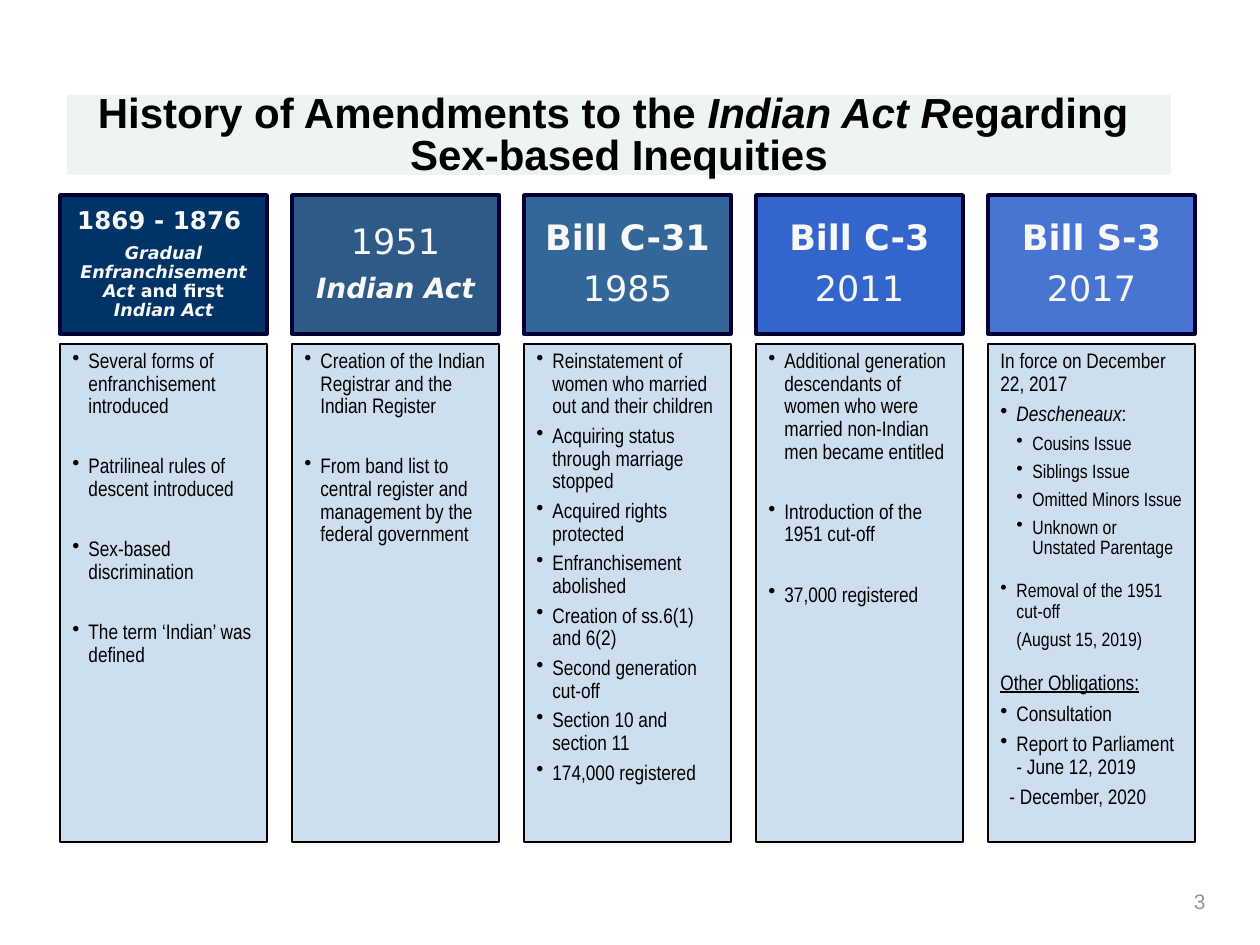
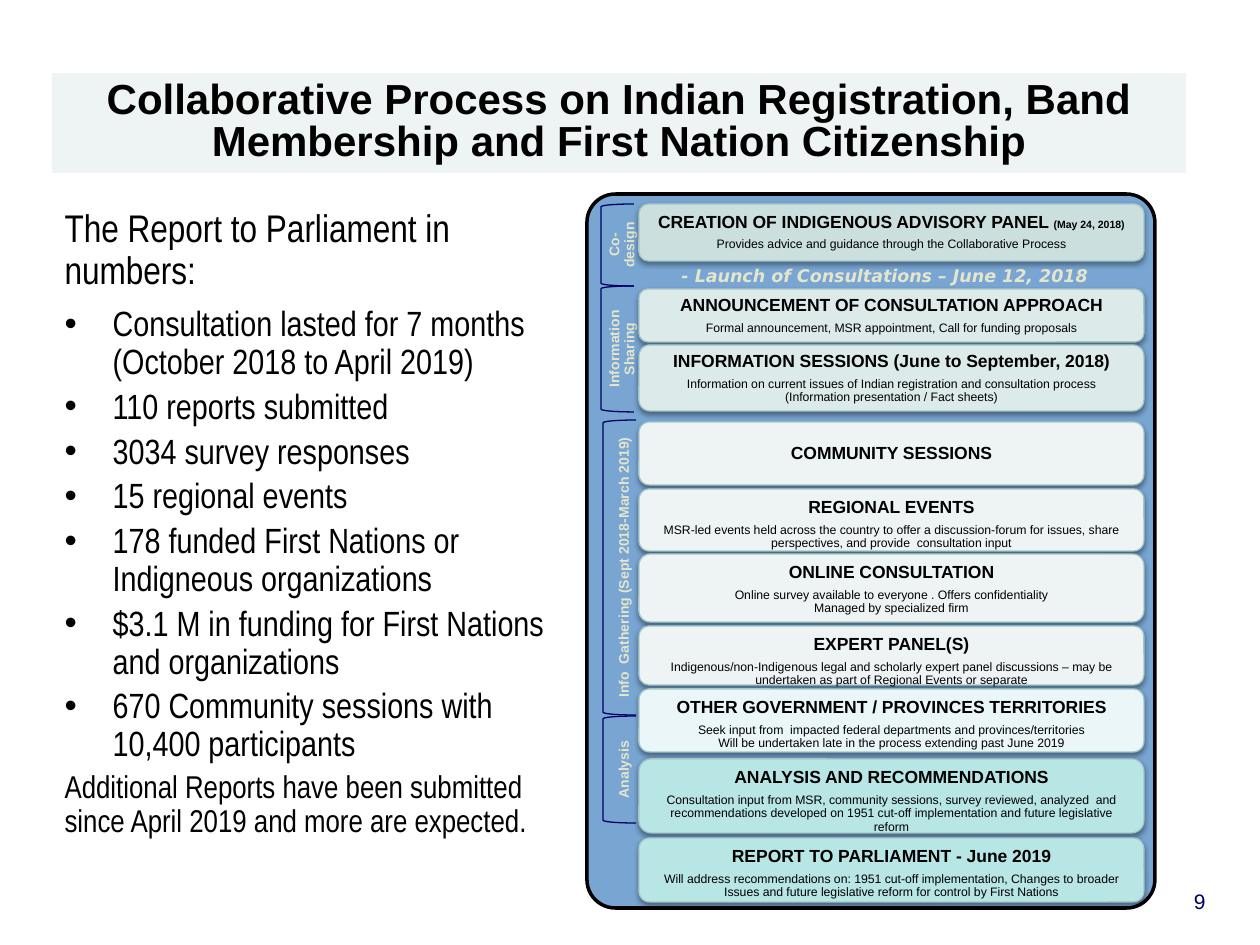
import pptx
import pptx.dml.color
import pptx.enum.shapes
import pptx.enum.text
import pptx.oxml
import pptx.oxml.ns
import pptx.util

MSO = pptx.enum.shapes.MSO_SHAPE
ANCHOR = pptx.enum.text.MSO_ANCHOR
ALIGN = pptx.enum.text.PP_ALIGN
EMU_PER_PX = 914400 / 126

BLACK, NAVY, CREAM, LIGHT = "000000", "000066", "E5E5CC", "F8F8F8"
TITLE_FILL, COLUMN_FILL, COLUMN_LINE = "EEF4F4", "CDDEEF", "000033"
PANEL_FILL, STAGE_LINE = "78A5D2", "A5C6C6"
SANS, NARROW, WIDE = "Arial", "Arial Narrow", "DejaVu Sans"


def px(n):
    return pptx.util.Emu(round(n * EMU_PER_PX))


def rgb(value):
    return pptx.dml.color.RGBColor.from_string(value)


def para(*runs, **style):
    """A paragraph: runs are strings or (string, run style) pairs."""
    return runs, style


class Deck:
    base = dict(font=SANS, size=12, color=BLACK, bold=False, italic=False,
                underline=False, align=ALIGN.LEFT, spacing=0.9, before=0,
                after=None, bullet=False, margin=0, hang=0)

    def __init__(self):
        self.prs = pptx.Presentation()
        self.prs.slide_width, self.prs.slide_height = px(1260), px(945)
        self.s = None

    def slide(self, layout):
        self.s = self.prs.slides.add_slide(self.prs.slide_layouts[layout])

    def place(self, sp, box):
        sp.left, sp.top, sp.width, sp.height = map(px, box)

    # Text
    def set_text(self, sp, paras, anchor=ANCHOR.TOP, **common):
        tf = sp.text_frame
        tf.word_wrap = True
        tf.auto_size = pptx.enum.text.MSO_AUTO_SIZE.NONE
        tf.vertical_anchor = anchor
        for i, (runs, own) in enumerate(paras):
            p = tf.paragraphs[0] if i == 0 else tf.add_paragraph()
            style = {**self.base, **common, **own}
            self.format_paragraph(p, style)
            for run in runs:
                text, extra = (run, {}) if isinstance(run, str) else run
                if text == "\n":
                    p.add_line_break()
                    continue
                r = p.add_run()
                r.text = text
                self.format_run(r, {**style, **extra})

    def format_paragraph(self, p, style):
        pPr = p._p.get_or_add_pPr()
        pPr.set("marL", str(px(style["margin"])))
        pPr.set("indent", str(px(-style["hang"])))
        tag = '<a:buChar %s char="•"/>' if style["bullet"] else "<a:buNone %s/>"
        pPr.append(pptx.oxml.parse_xml(tag % pptx.oxml.ns.nsdecls("a")))
        after = style["after"]
        p.alignment = style["align"]
        p.line_spacing = style["spacing"]
        p.space_before = pptx.util.Pt(style["before"])
        p.space_after = pptx.util.Pt(0.37 * style["size"] if after is None else after)

    def format_run(self, r, style):
        r.font.name = style["font"]
        r.font.size = pptx.util.Pt(style["size"])
        r.font.color.rgb = rgb(style["color"])
        r.font.bold = style["bold"]
        r.font.italic = style["italic"]
        r.font.underline = style["underline"]

    def title(self, box, runs, anchor):
        sp = self.s.shapes.title
        self.place(sp, box)
        sp.fill.solid()
        sp.fill.fore_color.rgb = rgb(TITLE_FILL)
        tf = sp.text_frame
        tf.margin_left = tf.margin_right = tf.margin_top = tf.margin_bottom = 0
        self.set_text(sp, [para(*runs)], anchor, size=24, bold=True, after=0,
                      align=ALIGN.CENTER, spacing=pptx.util.Pt(24))

    def body(self, box, paras, **common):
        sp = self.s.placeholders[1]
        self.place(sp, box)
        self.set_text(sp, paras, **common)

    def text(self, box, paras, **common):
        sp = self.s.shapes.add_textbox(*map(px, box))
        self.set_text(sp, paras, **common)

    def number(self, text, color):
        self.text((1113, 882, 105, 42), [para(text)], color=color, spacing=1.0,
                  align=ALIGN.RIGHT)

    # Shapes
    def shape(self, kind, box, fill, line, width):
        sp = self.s.shapes.add_shape(kind, *map(px, box))
        sp.shadow.inherit = False
        if fill:
            sp.fill.solid()
            sp.fill.fore_color.rgb = rgb(fill)
        else:
            sp.fill.background()
        sp.line.color.rgb = rgb(line)
        sp.line.width = pptx.util.Pt(width)
        return sp

    def stage(self, top, height, fill, heading, detail, anchor):
        sp = self.shape(MSO.ROUNDED_RECTANGLE, (639, top, 505, height), fill,
                        STAGE_LINE, 0.75)
        effects = sp._element.spPr.find(pptx.oxml.ns.qn("a:effectLst"))
        effects.append(pptx.oxml.parse_xml(
            '<a:outerShdw %s blurRad="39370" dist="20320" dir="5400000" rotWithShape="0">'
            '<a:srgbClr val="000000"><a:alpha val="38000"/></a:srgbClr></a:outerShdw>'
            % pptx.oxml.ns.nsdecls("a")))
        paras = [para(*heading, size=10, bold=True)]
        paras += [para(line, size=7, after=0) for line in detail]
        self.set_text(sp, paras, anchor, align=ALIGN.CENTER)

    def phase(self, left, top, height, label):
        sp = self.shape(MSO.LEFT_BRACKET, (left, top, 33, height), None, NAVY, 0.75)
        sp.text_frame._txBody.bodyPr.set("vert", "vert270")
        self.set_text(sp, [para(label)], ANCHOR.MIDDLE, size=8, bold=True,
                      color=CREAM, align=ALIGN.CENTER)


def item(*runs, **style):
    return para(*runs, **{**dict(bullet=True, margin=16, hang=16), **style})


def spaced(text):
    return item(text, before=17)


def sub_item(text):
    return item(text, size=11, margin=32)


ITALIC = dict(italic=True)


def bill(name, year):
    return [para(name, bold=True), para(year)]


# Header fill, header text, list under it
AMENDMENTS = [
    ("003366",
     [para("1869 - 1876 ", size=14, bold=True),
      para(("Gradual Enfranchisement Act ", ITALIC), "and first", (" Indian Act", ITALIC),
           size=10, bold=True)],
     [item("Several forms of enfranchisement introduced"),
      spaced("Patrilineal rules of descent introduced"),
      spaced("Sex-based discrimination"),
      spaced("The term ‘Indian’ was defined")]),
    ("2D5A87",
     [para("1951"), para("Indian Act", size=16, bold=True, italic=True)],
     [item("Creation of the Indian Registrar and the Indian Register"),
      spaced("From band list to central register and management by the federal government")]),
    ("336699", bill("Bill C-31", "1985"),
     [item(text, after=4) for text in (
         "Reinstatement of women who married out and their children",
         "Acquiring status through marriage stopped",
         "Acquired rights protected",
         "Enfranchisement abolished",
         "Creation of ss.6(1) and 6(2)",
         "Second generation cut-off",
         "Section 10 and section 11",
         "174,000 registered")]),
    ("3366CC", bill("Bill C-3", "2011"),
     [item("Additional generation descendants of women who were married non-Indian "
           "men became entitled"),
      spaced("Introduction of the 1951 cut-off"),
      spaced("37,000 registered")]),
    ("4775D1", bill("Bill S-3", "2017"),
     [para("In force on December 22, 2017"),
      item(("Descheneaux", ITALIC), ":"),
      sub_item("Cousins Issue"),
      sub_item("Siblings Issue"),
      sub_item("Omitted Minors Issue"),
      sub_item("Unknown or Unstated Parentage"),
      item("Removal of the 1951 cut-off", size=11, before=8.5),
      para("(August 15, 2019)", size=11, margin=16),
      para("Other Obligations:", underline=True, before=8.5),
      item("Consultation"),
      item("Report to Parliament - June 12, 2019"),
      para("- December, 2020", margin=9)]),
]

REPORT_NUMBERS = [
    "Consultation lasted for 7 months (October 2018 to April 2019)",
    "110 reports submitted",
    "3034 survey responses",
    "15 regional events",
    "178 funded First Nations or Indigneous organizations",
    "$3.1 M in funding for First Nations and organizations",
    "670 Community sessions with 10,400 participants",
]

# Left, top, height, label
PHASES = [
    (601, 204, 82, "Co-design"),
    (601, 286, 126, "Information Sharing"),
    (603, 420, 295, "Info  Gathering (Sept 2018-March 2019)"),
    (603, 716, 107, "Analysis"),
]

# Top, height, fill, heading, detail lines, anchor
STAGES = [
    (204, 57, "CCDFDF",
     ["CREATION OF INDIGENOUS ADVISORY PANEL ", ("(May 24, 2018)", dict(size=6))],
     ["Provides advice and guidance through the Collaborative Process"], ANCHOR.TOP),
    (289, 53, "DDEAEA", ["ANNOUNCEMENT OF CONSULTATION APPROACH"],
     ["Formal announcement, MSR appointment, Call for funding proposals"], ANCHOR.MIDDLE),
    (345, 66, "DDEAEA", ["INFORMATION SESSIONS (June to September, 2018)"],
     ["Information on current issues of Indian registration and consultation process "
      "(Information presentation / Fact sheets)"], ANCHOR.MIDDLE),
    (422, 63, "EEF4F4", ["COMMUNITY SESSIONS"], [], ANCHOR.MIDDLE),
    (489, 62, "EEF4F4", ["REGIONAL EVENTS"],
     ["MSR-led events held across the country to offer a discussion-forum for issues, "
      "share perspectives, and provide  consultation input"], ANCHOR.TOP),
    (554, 68, "EEF4F4", ["ONLINE CONSULTATION"],
     ["Online survey available to everyone . Offers confidentiality",
      "Managed by specialized firm"], ANCHOR.TOP),
    (626, 59, "EEF4F4", ["EXPERT PANEL(S)"],
     ["Indigenous/non-Indigenous legal and scholarly expert panel discussions – may be "
      "undertaken as part of Regional Events or separate"], ANCHOR.TOP),
    (689, 63, "EBF6F9", ["OTHER GOVERNMENT / PROVINCES TERRITORIES"],
     ["Seek input from  impacted federal departments and provinces/territories",
      "Will be undertaken late in the process extending past June 2019"], ANCHOR.TOP),
    (759, 74, "B8E6E5", ["ANALYSIS AND RECOMMENDATIONS"],
     ["Consultation input from MSR, community sessions, survey reviewed, analyzed  and "
      "recommendations developed on 1951 cut-off implementation and future legislative "
      "reform"], ANCHOR.TOP),
    (838, 64, "B8E6E5", ["REPORT TO PARLIAMENT - June 2019"],
     ["Will address recommendations on: 1951 cut-off implementation, Changes to broader "
      "Issues and future legislative reform for control by First Nations"], ANCHOR.TOP),
]


def amendments_slide(deck):
    deck.slide(5)
    deck.title((67, 95, 1104, 80),
               ["History of Amendments to the ", ("Indian Act R", ITALIC), "egarding ",
                "\n", "Sex-based Inequities"], ANCHOR.TOP)
    for i, (fill, heading, items) in enumerate(AMENDMENTS):
        left = 60 + 232 * i
        sp = deck.shape(MSO.RECTANGLE, (left, 195, 207, 139), fill, COLUMN_LINE, 2)
        deck.set_text(sp, heading, ANCHOR.MIDDLE, font=WIDE, size=20, color=LIGHT,
                      align=ALIGN.CENTER)
        sp = deck.shape(MSO.RECTANGLE, (left, 344, 207, 498), COLUMN_FILL, BLACK, 1.5)
        deck.set_text(sp, items, font=NARROW)
    deck.number("3", "969696")


def process_slide(deck):
    deck.slide(1)
    deck.title((52, 73, 1134, 100),
               ["Collaborative Process on Indian Registration, Band Membership and "
                "First Nation Citizenship"], ANCHOR.MIDDLE)
    # Report in numbers
    numbers = [item(text, size=20, margin=48, hang=48) for text in REPORT_NUMBERS]
    deck.body((52, 203, 514, 651),
              [para("The Report to Parliament in numbers:", size=22, after=8), *numbers,
               para("Additional Reports have been submitted since April 2019 and more "
                    "are expected.", size=18)],
              font=NARROW, after=4)
    # Process panel
    panel = deck.shape(MSO.ROUNDED_RECTANGLE, (587, 194, 568, 714), PANEL_FILL, BLACK, 2)
    panel.adjustments[0] = 0.05
    for phase in PHASES:
        deck.phase(*phase)
    for stage in STAGES:
        deck.stage(*stage)
    deck.text((655, 261, 459, 33), [para("- Launch of Consultations – June 12, 2018")],
              font=WIDE, size=10, color=CREAM, bold=True, italic=True,
              align=ALIGN.CENTER)
    deck.number("9", NAVY)


def main():
    deck = Deck()
    amendments_slide(deck)
    process_slide(deck)
    deck.prs.save("out.pptx")


if __name__ == "__main__":
    main()
